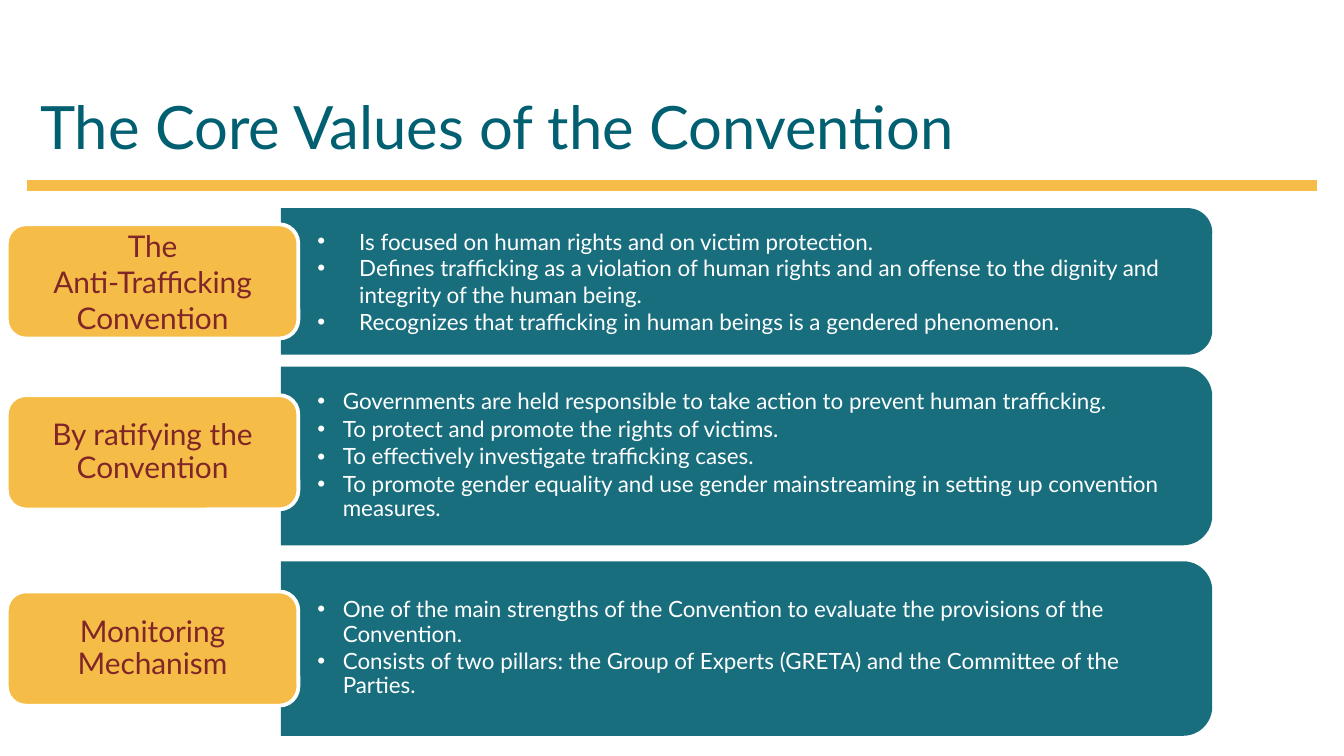
from lxml import etree
from pptx import Presentation
from pptx.dml.color import RGBColor
from pptx.enum import shapes, text
from pptx.oxml.ns import qn
from pptx.util import Cm, Pt

TEAL = RGBColor(0x00, 0x5F, 0x71)
AMBER = RGBColor(0xF5, 0xBD, 0x47)
MAROON = RGBColor(0x80, 0x25, 0x28)
WHITE = RGBColor(0xFF, 0xFF, 0xFF)
FONT = "Lato"

TITLE = "The Core Values of the Convention"
# Lengths in cm; spacing is the line spacing and "after" the points after a paragraph.
ROWS = [
    dict(label=["The", "Anti-Trafficking Convention"],
         center=5.32, label_center=5.32, height=2.77, indent=0.79, spacing=1.0, after=0,
         points=["Is focused on human rights and on victim protection.",
                 "Defines trafficking as a violation of human rights and an offense "
                 "to the dignity and integrity of the human being.",
                 "Recognizes that trafficking in human beings is a gendered phenomenon."]),
    dict(label=["By ratifying the Convention"],
         center=8.62, label_center=8.55, height=3.38, indent=0.48, spacing=0.9, after=1.8,
         points=["Governments are held responsible to take action to prevent human trafficking.",
                 "To protect and promote the rights of victims.",
                 "To effectively investigate trafficking cases.",
                 "To promote gender equality and use gender mainstreaming in setting up "
                 "convention measures."]),
    dict(label=["Monitoring Mechanism"],
         center=12.26, label_center=12.26, height=3.3, indent=0.48, spacing=0.9, after=1.8,
         points=["One of the main strengths of the Convention to evaluate the provisions "
                 "of the Convention.",
                 "Consists of two pillars: the Group of Experts (GRETA) and the Committee "
                 "of the Parties."]),
]
PANEL_LEFT, PANEL_W = 5.31, 17.6
LABEL_LEFT, LABEL_W, LABEL_H = 0.13, 5.51, 2.16
TEXT_INSET = 0.12


def add_shape(s, kind, left, top, width, height, color):
    sp = s.shapes.add_shape(kind, Cm(left), Cm(top), Cm(width), Cm(height))
    sp.shadow.inherit = False
    sp.fill.solid()
    sp.fill.fore_color.rgb = color
    sp.line.fill.background()
    return sp


def add_text(s, lines, box, size, color, align=text.PP_ALIGN.LEFT, anchor=text.MSO_ANCHOR.MIDDLE,
             inset=(0.25, 0.13), spacing=1.0, after=0, indent=0):
    """Add a text box, one paragraph a line; an indent makes them bullets."""
    tf = s.shapes.add_textbox(*[Cm(v) for v in box]).text_frame
    tf.word_wrap = True
    tf.vertical_anchor = anchor
    tf.margin_left = tf.margin_right = Cm(inset[0])
    tf.margin_top = tf.margin_bottom = Cm(inset[1])
    for i, line in enumerate(lines):
        p = tf.add_paragraph() if i else tf.paragraphs[0]
        p.alignment = align
        p.line_spacing = spacing
        p.space_after = Pt(after)
        if indent:
            pPr = p._p.get_or_add_pPr()
            pPr.set("marL", str(Cm(indent)))
            pPr.set("indent", str(-Cm(indent)))
            etree.SubElement(pPr, qn("a:buFont")).set("typeface", "Arial")
            etree.SubElement(pPr, qn("a:buChar")).set("char", "•")
        r = p.add_run()
        r.text = line
        r.font.name, r.font.size = FONT, Pt(size)
        r.font.color.rgb = color


def add_panel(s, row):
    """Add the bulleted panel, a top-rounded rectangle turned to round its right side."""
    h = row["height"]
    sp = add_shape(s, shapes.MSO_SHAPE.ROUND_2_SAME_RECTANGLE,
                   PANEL_LEFT + (PANEL_W - h) / 2, row["center"] - PANEL_W / 2, h, PANEL_W, TEAL)
    sp.rotation = 90
    clr = sp.fill._xPr.find(qn("a:solidFill"))[0]
    etree.SubElement(clr, qn("a:alpha")).set("val", "90000")
    text_h = h - 0.36
    add_text(s, row["points"], (PANEL_LEFT, row["center"] - text_h / 2, PANEL_W - 0.13, text_h),
             12, WHITE, inset=(0.69, 0.36), spacing=row["spacing"], after=row["after"],
             indent=row["indent"])


def add_label(s, row):
    top = row["label_center"] - LABEL_H / 2
    sp = add_shape(s, shapes.MSO_SHAPE.ROUNDED_RECTANGLE, LABEL_LEFT, top, LABEL_W, LABEL_H, AMBER)
    sp.line.color.rgb = WHITE
    sp.line.width = Pt(2)
    add_text(s, row["label"],
             (LABEL_LEFT + TEXT_INSET, top + TEXT_INSET,
              LABEL_W - 2 * TEXT_INSET, LABEL_H - 2 * TEXT_INSET),
             16, MAROON, align=text.PP_ALIGN.CENTER, spacing=row["spacing"])


prs = Presentation()
prs.slide_width, prs.slide_height = Cm(25.4), Cm(14.29)
s = prs.slides.add_slide(prs.slide_layouts[6])

rule = s.shapes.add_connector(shapes.MSO_CONNECTOR.STRAIGHT, Cm(24.89), Cm(3.51), Cm(0.51), Cm(3.51))
rule.line.color.rgb = AMBER
rule.line.width = Pt(6)
etree.SubElement(rule._element.spPr, qn("a:effectLst"))

add_text(s, [TITLE], (0.51, 0.79, 24.38, 2.39), 32, TEAL, anchor=text.MSO_ANCHOR.BOTTOM)
for row in ROWS:
    add_panel(s, row)
for row in ROWS:
    add_label(s, row)

prs.save("out.pptx")
